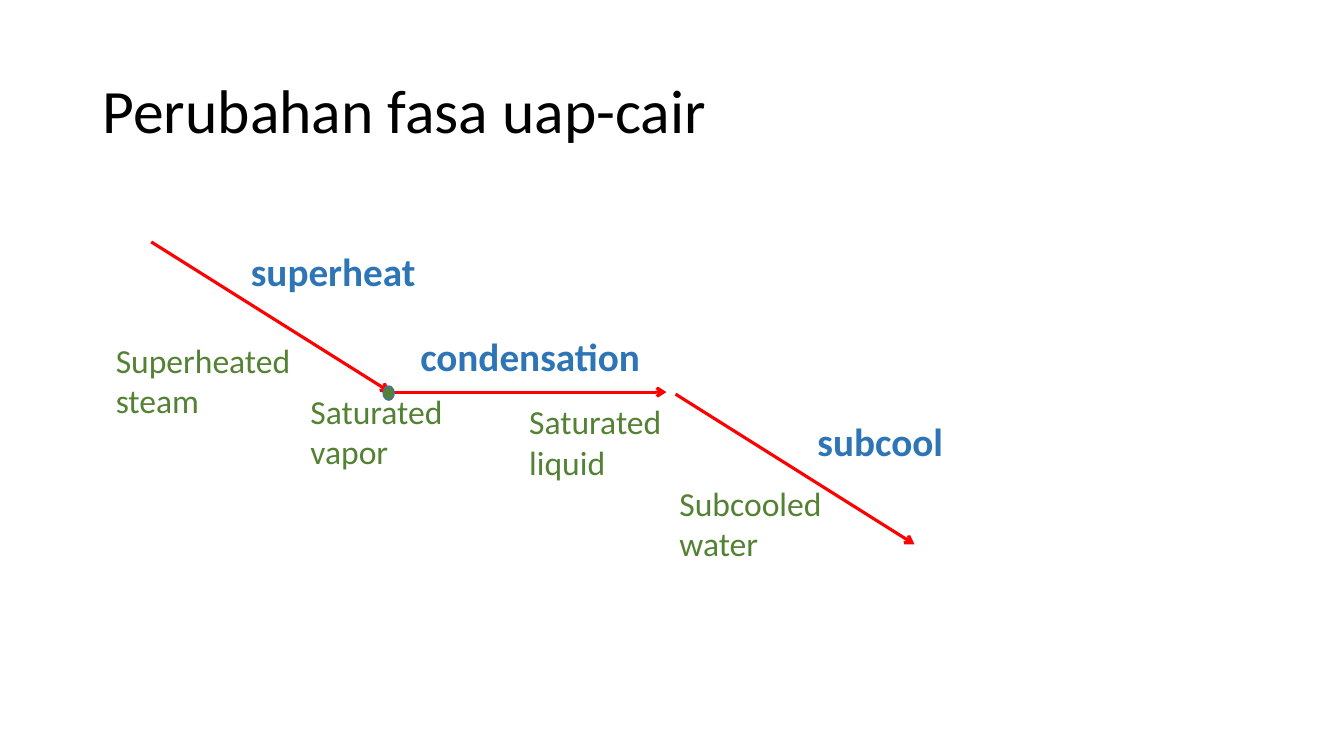
from pptx import Presentation
from pptx.dml.color import RGBColor
from pptx.enum.shapes import MSO_CONNECTOR, MSO_SHAPE
from pptx.enum.text import MSO_ANCHOR
from pptx.oxml.ns import qn
from pptx.util import Pt
from lxml.etree import SubElement

PX = 9144  # 100 px to the inch
BLACK = RGBColor(0x00, 0x00, 0x00)
RED = RGBColor(0xFF, 0x00, 0x00)
BLUE = RGBColor(0x2E, 0x75, 0xB6)
GREEN = RGBColor(0x54, 0x82, 0x35)
EDGE = RGBColor(0x43, 0x73, 0x9E)

deck = Presentation()
deck.slide_width, deck.slide_height = 1333 * PX, 750 * PX
slide = deck.slides.add_slide(deck.slide_layouts[6])
shapes = slide.shapes


def add_text(text, left, top, width, height, size, color,
             bold=False, anchor=MSO_ANCHOR.TOP, spacing=1.0):
    box = shapes.add_textbox(left * PX, top * PX, width * PX, height * PX)
    frame = box.text_frame
    frame.word_wrap = True
    frame.vertical_anchor = anchor
    para = frame.paragraphs[0]
    para.line_spacing = spacing
    run = para.add_run()
    run.text = text
    font = run.font
    font.name, font.size, font.bold = "Calibri", Pt(size), bold
    font.color.rgb = color


# Title
add_text("Perubahan fasa uap-cair", 92, 40, 1150, 145, size=44, color=BLACK,
         anchor=MSO_ANCHOR.MIDDLE, spacing=0.9)

# Process arrows: condensation, superheat, subcool
for x1, y1, x2, y2 in [(387, 389, 661, 389),
                       (150, 240, 387, 389),
                       (670, 391, 907, 540)]:
    arrow = shapes.add_connector(MSO_CONNECTOR.STRAIGHT,
                                 x1 * PX, y1 * PX, x2 * PX, y2 * PX)
    arrow.line.color.rgb = RED
    arrow.line.width = Pt(2.25)
    SubElement(arrow.line._get_or_add_ln(), qn("a:tailEnd"), type="arrow")
    SubElement(arrow._element.spPr, qn("a:effectLst"))

# Process names
for name, left, top, width in [("superheat", 239, 240, 193),
                               ("condensation", 407, 325, 254),
                               ("subcool", 801, 409, 193)]:
    add_text(name, left, top, width, 57, size=28, color=BLUE, bold=True)

# States
for state, left, top in [("Superheated steam", 105, 332),
                         ("Saturated vapor", 298, 383),
                         ("Saturated liquid", 515, 393),
                         ("Subcooled water", 664, 474)]:
    add_text(state, left, top, 207, 91, size=24, color=GREEN)

# Saturated vapor point
dot = shapes.add_shape(MSO_SHAPE.OVAL, 380 * PX, 383 * PX, 11 * PX, 14 * PX)
dot.shadow.inherit = False
dot.fill.solid()
dot.fill.fore_color.rgb = GREEN
dot.line.color.rgb = EDGE
dot.line.width = Pt(1)

deck.save("out.pptx")
